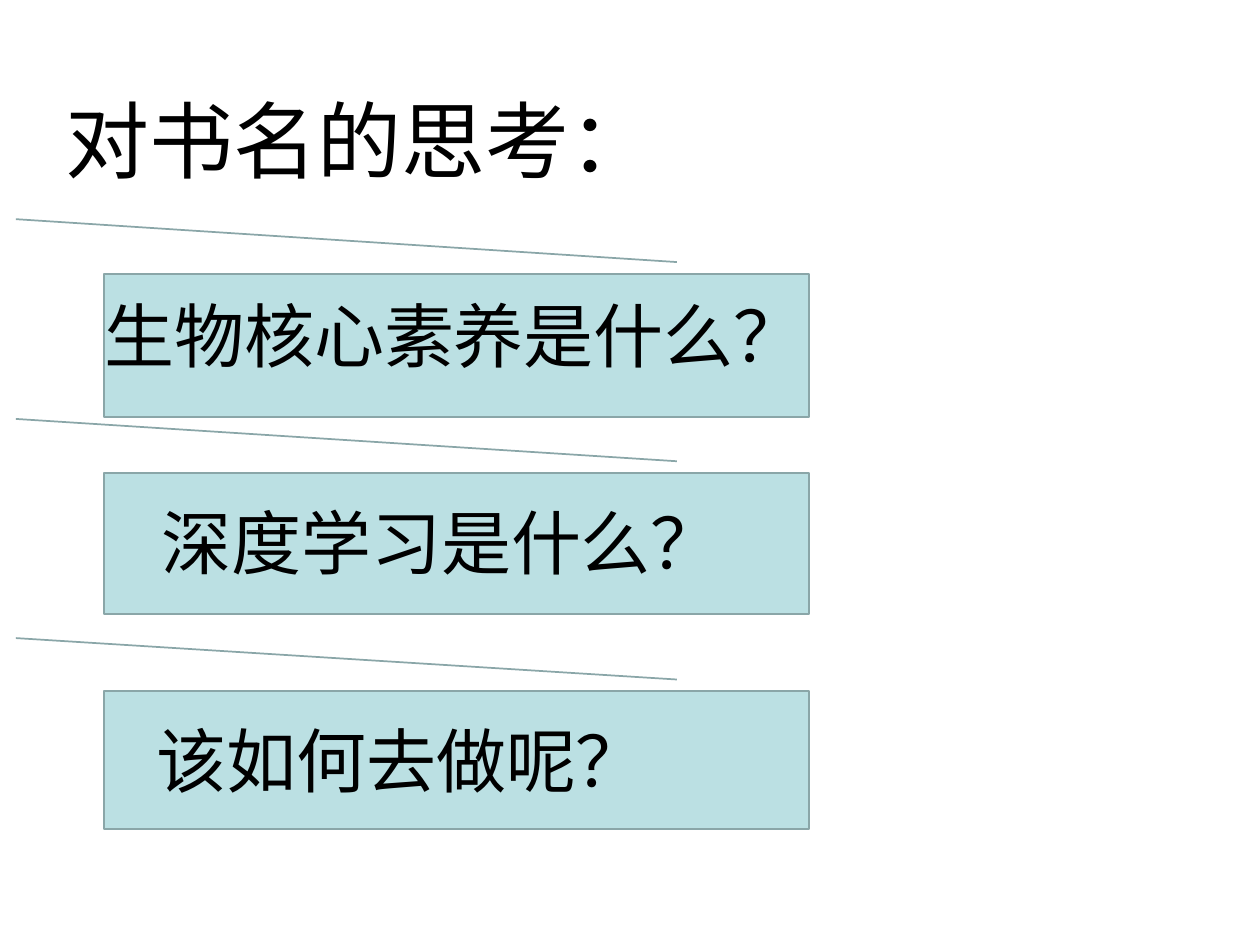
from dataclasses import dataclass

from lxml.etree import SubElement
from pptx import Presentation
from pptx.dml.color import RGBColor
from pptx.enum.shapes import MSO_SHAPE as Shape
from pptx.enum.text import MSO_AUTO_SIZE as AutoSize
from pptx.oxml.ns import qn
from pptx.util import Inches, Pt

# Content: wording, text (left, top, width, height), panel (top, height), in px
TITLE = ("对书名的思考：", (53, 82, 796, 115))
QUESTIONS = [
    ("生物核心素养是什么？", (92, 286, 717, 97), (274, 143)),
    ("深度学习是什么？", (149, 493, 523, 97), (473, 141)),
    ("该如何去做呢？", (144, 711, 537, 97), (691, 138)),
]
PANEL_LEFT, PANEL_WIDTH = 104, 705


@dataclass(frozen=True)
class Theme:
    font: str = "Noto Sans CJK SC"
    title_size: int = 48
    question_size: int = 40
    ink: RGBColor = RGBColor(0x00, 0x00, 0x00)
    paper: RGBColor = RGBColor(0xFF, 0xFF, 0xFF)
    panel: RGBColor = RGBColor(0xBB, 0xE0, 0xE3)
    edge: RGBColor = RGBColor(0x8A, 0xA6, 0xA8)


THEME = Theme()


def px(length):
    return round(length * Inches(1) / 126)


def add_text(page, wording, place, size):
    box = page.shapes.add_textbox(*map(px, place))
    frame = box.text_frame
    frame.word_wrap = True
    frame.auto_size = AutoSize.SHAPE_TO_FIT_TEXT
    para = frame.paragraphs[0]
    para.text = wording
    para.font.size = Pt(size)
    para.font.name = THEME.font
    para.font.color.rgb = THEME.ink
    # East Asian typeface
    defaults = para._p.pPr.find(qn("a:defRPr"))
    SubElement(defaults, qn("a:ea"), typeface=THEME.font)


def add_panel(page, top, height):
    # A callout turned a quarter: its own width and height swap about the centre
    shift = (PANEL_WIDTH - height) / 2
    place = (PANEL_LEFT + shift, top - shift, height, PANEL_WIDTH)
    panel = page.shapes.add_shape(Shape.LINE_CALLOUT_1, *map(px, place))
    panel.rotation = 90
    panel.shadow.inherit = False
    panel.fill.solid()
    panel.fill.fore_color.rgb = THEME.panel
    panel.line.color.rgb = THEME.edge
    panel.line.width = Pt(1)


def main():
    deck = Presentation()
    deck.slide_width, deck.slide_height = Inches(10), Inches(7.5)
    page = deck.slides.add_slide(deck.slide_layouts[6])
    page.background.fill.solid()
    page.background.fill.fore_color.rgb = THEME.paper

    # Title
    add_text(page, *TITLE, THEME.title_size)

    # Panels with their questions
    for wording, place, span in QUESTIONS:
        add_panel(page, *span)
        add_text(page, wording, place, THEME.question_size)

    deck.save("out.pptx")


if __name__ == "__main__":
    main()
